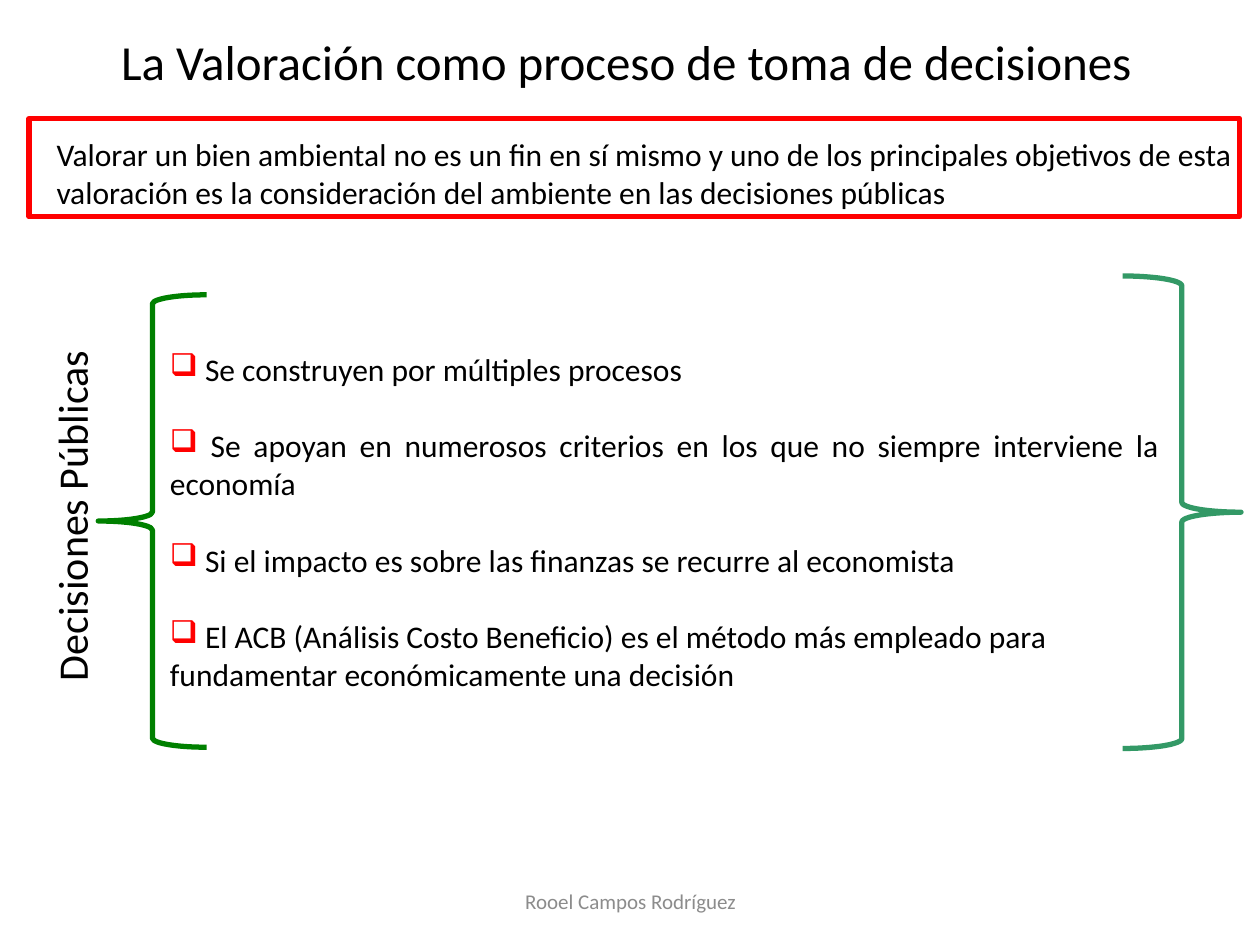
from dataclasses import dataclass

from lxml import etree
from pptx import Presentation
from pptx.dml.color import RGBColor
from pptx.enum import shapes as kinds, text as txt
from pptx.oxml import ns
from pptx.util import Inches, Pt

FONT = "Calibri"
BLACK, RED, GREEN, TEAL, GRAY = "000000", "FF0000", "008000", "339966", "8C8C8C"
LEFT, MID, JUST = (txt.PP_ALIGN.LEFT, txt.PP_ALIGN.CENTER, txt.PP_ALIGN.JUSTIFY)
Box = tuple[float, float, float, float]


@dataclass
class Frame:
    box: Box
    kind: kinds.MSO_SHAPE
    color: str


@dataclass
class Label:
    box: Box
    lines: list[str]
    size: int
    color: str = BLACK
    align: txt.PP_ALIGN = LEFT
    wrap: bool = True
    middle: bool = False
    turn: int = 0


FRAMES = [
    Frame((0.23, 0.94, 9.61, 0.78), kinds.MSO_SHAPE.RECTANGLE, RED),
    Frame((0.78, 2.34, 0.86, 3.59), kinds.MSO_SHAPE.LEFT_BRACE, GREEN),
    Frame((8.91, 2.19, 0.94, 3.75), kinds.MSO_SHAPE.RIGHT_BRACE, TEAL),
]

LABELS = [
    Label((0.47, 0.16, 9, 0.64), ["La Valoración como proceso de toma de decisiones"],
          28, align=MID, middle=True),
    Label((0.35, 1.02, 9.65, 0.71), [
        "Valorar un bien ambiental no es un fin en sí mismo y uno de los "
        "principales objetivos de esta",
        "valoración es la consideración del ambiente en las decisiones públicas",
    ], 18, wrap=False),
    Label((-0.86, 3.83, 2.85, 0.5), ["Decisiones Públicas"], 24, wrap=False, turn=270),
    Label((3.42, 6.95, 3.17, 0.4), ["Rooel Campos Rodríguez"], 12, GRAY, MID, middle=True),
]

POINTS = Label((1.25, 2.73, 8.05, 2.83), [
    " Se construyen por múltiples procesos",
    " Se apoyan en numerosos criterios en los que no siempre interviene la economía",
    " Si el impacto es sobre las finanzas se recurre al economista",
    " El ACB (Análisis Costo Beneficio) es el método más empleado para",
    "fundamentar económicamente una decisión",
], 18, align=JUST)


def rgb(code: str) -> RGBColor:
    return RGBColor.from_string(code)


def place(box: Box) -> list[int]:
    return [Inches(n) for n in box]


def draw_frame(slide, item: Frame) -> None:
    shape = slide.shapes.add_shape(item.kind, *place(item.box))
    shape.shadow.inherit = False
    shape.fill.background()
    shape.line.color.rgb = rgb(item.color)
    shape.line.width = Pt(3)


def draw_label(slide, item: Label):
    shape = slide.shapes.add_textbox(*place(item.box))
    shape.rotation = item.turn
    frame = shape.text_frame
    frame.word_wrap = item.wrap
    if item.middle:
        frame.vertical_anchor = txt.MSO_ANCHOR.MIDDLE
    frame.text = "\n".join(item.lines)
    for para in frame.paragraphs:
        para.alignment = item.align
        for run in para.runs:
            run.font.name = FONT
            run.font.size = Pt(item.size)
            run.font.color.rgb = rgb(item.color)
    return frame


def add_bullet(para, color: str) -> None:
    props = para._p.get_or_add_pPr()
    tint = etree.SubElement(props, ns.qn("a:buClr"))
    etree.SubElement(tint, ns.qn("a:srgbClr"), val=color)
    etree.SubElement(props, ns.qn("a:buChar"), char="❑")


def draw_points(slide, item: Label) -> None:
    """Bullet every line but the last, which continues the one above it."""
    frame = draw_label(slide, item)
    for i, para in enumerate(frame.paragraphs[:-1]):
        if i:
            para.space_before = Pt(22)
        add_bullet(para, RED)


def main() -> None:
    deck = Presentation()
    deck.slide_width, deck.slide_height = Inches(10), Inches(7.5)
    slide = deck.slides.add_slide(deck.slide_layouts[6])
    for item in FRAMES:
        draw_frame(slide, item)
    for item in LABELS:
        draw_label(slide, item)
    draw_points(slide, POINTS)
    deck.save("out.pptx")


if __name__ == "__main__":
    main()
